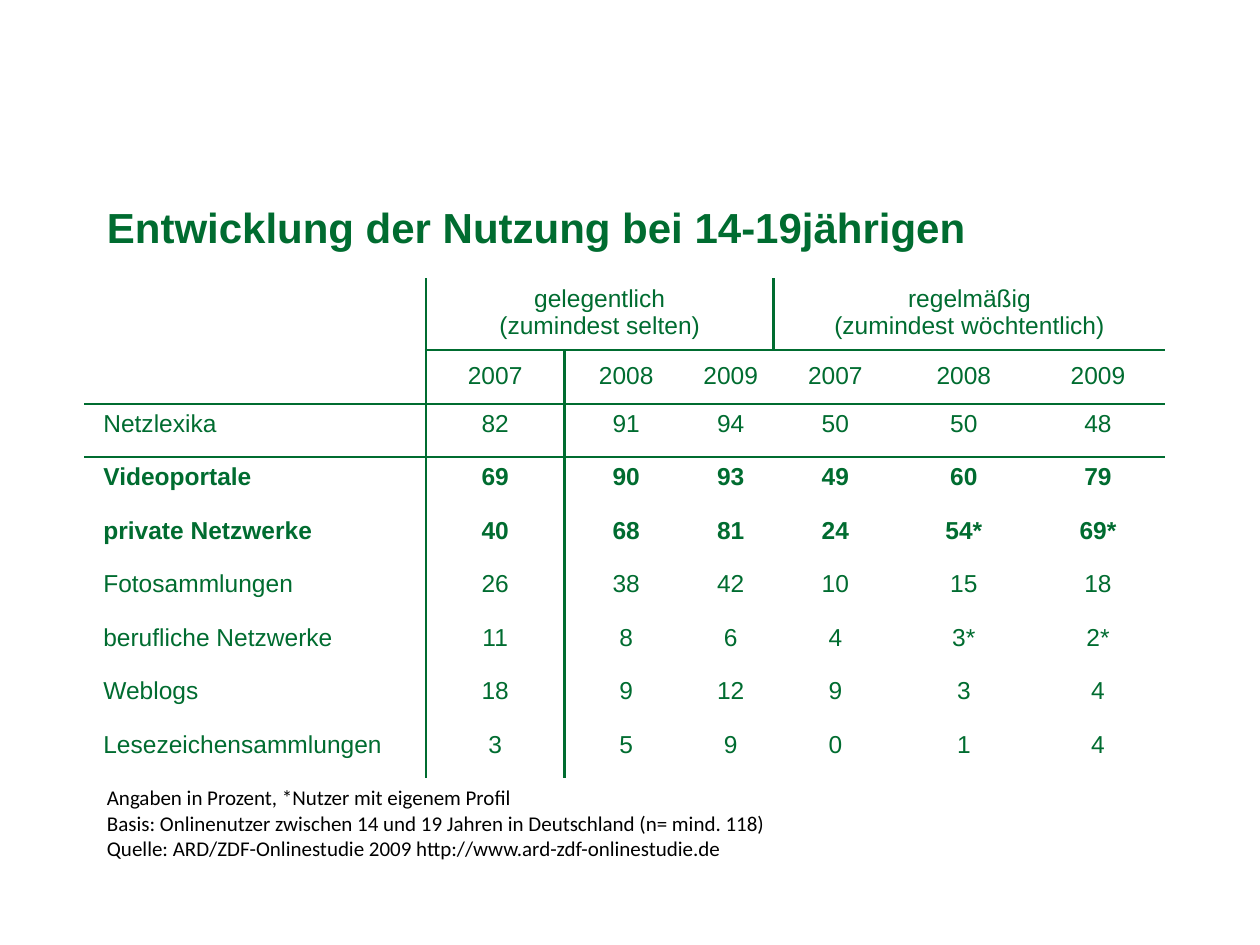
from dataclasses import dataclass
from lxml.etree import SubElement
from pptx import Presentation
from pptx.dml.color import RGBColor
from pptx.enum.text import MSO_ANCHOR, PP_ALIGN as Align
from pptx.oxml.ns import qn
from pptx.util import Inches, Pt


@dataclass(frozen=True)
class Theme:
    green: str = "006C30"
    black: str = "000000"
    heading: str = "Arial"
    body: str = "Calibri"
    title_size: int = 24
    table_size: int = 14
    note_size: int = 12
    rule: float = 1.5
    thin_rule: float = 1


theme = Theme()


def write(frame, text, size=theme.table_size, color=theme.green, font=theme.heading,
          bold=False, align=Align.LEFT, spacing=1.0):
    frame.word_wrap = True
    for index, line in enumerate(text.split("\n")):
        para = frame.add_paragraph() if index else frame.paragraphs[0]
        para.text = line
        para.alignment = align
        para.line_spacing = spacing
        for span in para.runs:
            span.font.size = Pt(size)
            span.font.name = font
            span.font.bold = bold
            span.font.color.rgb = RGBColor.from_string(color)


def add_border(cell, side, width):
    line = SubElement(cell._tc.get_or_add_tcPr(), qn(f"a:ln{side}"), w=str(Pt(width)))
    fill = SubElement(line, qn("a:solidFill"))
    SubElement(fill, qn("a:srgbClr"), val=theme.green)


deck = Presentation()
deck.slide_width, deck.slide_height = Inches(10), Inches(7.5)
page = deck.slides.add_slide(deck.slide_layouts[6])

title = page.shapes.add_textbox(Inches(0.75), Inches(1.55), Inches(8.19), Inches(0.55))
write(title.text_frame, "Entwicklung der Nutzung bei 14-19jährigen",
      size=theme.title_size, bold=True)

notes = page.shapes.add_textbox(Inches(0.75), Inches(6.18), Inches(8.98), Inches(0.7))
write(notes.text_frame,
      "Angaben in Prozent, *Nutzer mit eigenem Profil\n"
      "Basis: Onlinenutzer zwischen 14 und 19 Jahren in Deutschland (n= mind. 118)\n"
      "Quelle: ARD/ZDF-Onlinestudie 2009 http://www.ard-zdf-onlinestudie.de",
      size=theme.note_size, color=theme.black, font=theme.body)

years = ["2007", "2008", "2009"]
rows = [
    ["", "gelegentlich\v(zumindest selten)", "", "", "regelmäßig\v(zumindest wöchtentlich)", "", ""],
    ["", *years, *years],
    ["Netzlexika", "82", "91", "94", "50", "50", "48"],
    ["Videoportale", "69", "90", "93", "49", "60", "79"],
    ["private Netzwerke", "40", "68", "81", "24", "54*", "69*"],
    ["Fotosammlungen", "26", "38", "42", "10", "15", "18"],
    ["berufliche Netzwerke", "11", "8", "6", "4", "3*", "2*"],
    ["Weblogs", "18", "9", "12", "9", "3", "4"],
    ["Lesezeichensammlungen", "3", "5", "9", "0", "1", "4"],
]
bold_rows = {"Videoportale", "private Netzwerke"}
column_widths = [2.71, 1.1, 0.98, 0.68, 0.98, 1.06, 1.07]
table_height, group_height = 3.97, 0.57
row_height = (table_height - group_height) / (len(rows) - 1)

table = page.shapes.add_table(len(rows), len(column_widths), Inches(0.67), Inches(2.21),
                              Inches(sum(column_widths)), Inches(table_height)).table
table.first_row = table.horz_banding = False
table._tbl.tblPr.find(qn("a:tableStyleId")).text = "{2D5ABB26-0587-4C30-8999-92F81FD0307C}"

for column, width in zip(table.columns, column_widths):
    column.width = Inches(width)
for first in (1, 4):
    table.cell(0, first).merge(table.cell(0, first + 2))

for row_index, values in enumerate(rows):
    table.rows[row_index].height = Inches(row_height if row_index else group_height)
    for column_index, value in enumerate(values):
        cell = table.cell(row_index, column_index)
        is_label = column_index == 0
        cell.margin_left = Inches(0.15 if is_label else 0.1)
        cell.vertical_anchor = MSO_ANCHOR.TOP
        if value:
            write(cell.text_frame, value, bold=values[0] in bold_rows,
                  align=Align.LEFT if is_label else Align.CENTER,
                  spacing=1.2 if row_index == 1 else 1.0)
        if column_index < 2:
            add_border(cell, "R" if is_label else "L", theme.rule)
        if row_index == 1 and not is_label:
            add_border(cell, "T", theme.thin_rule)
        if row_index == 2:
            add_border(cell, "T", theme.rule)
        if row_index == 0 and not is_label:
            add_border(cell, "B", theme.thin_rule)
        if row_index == 1:
            add_border(cell, "B", theme.rule)
        cell.fill.background()

deck.save("out.pptx")
